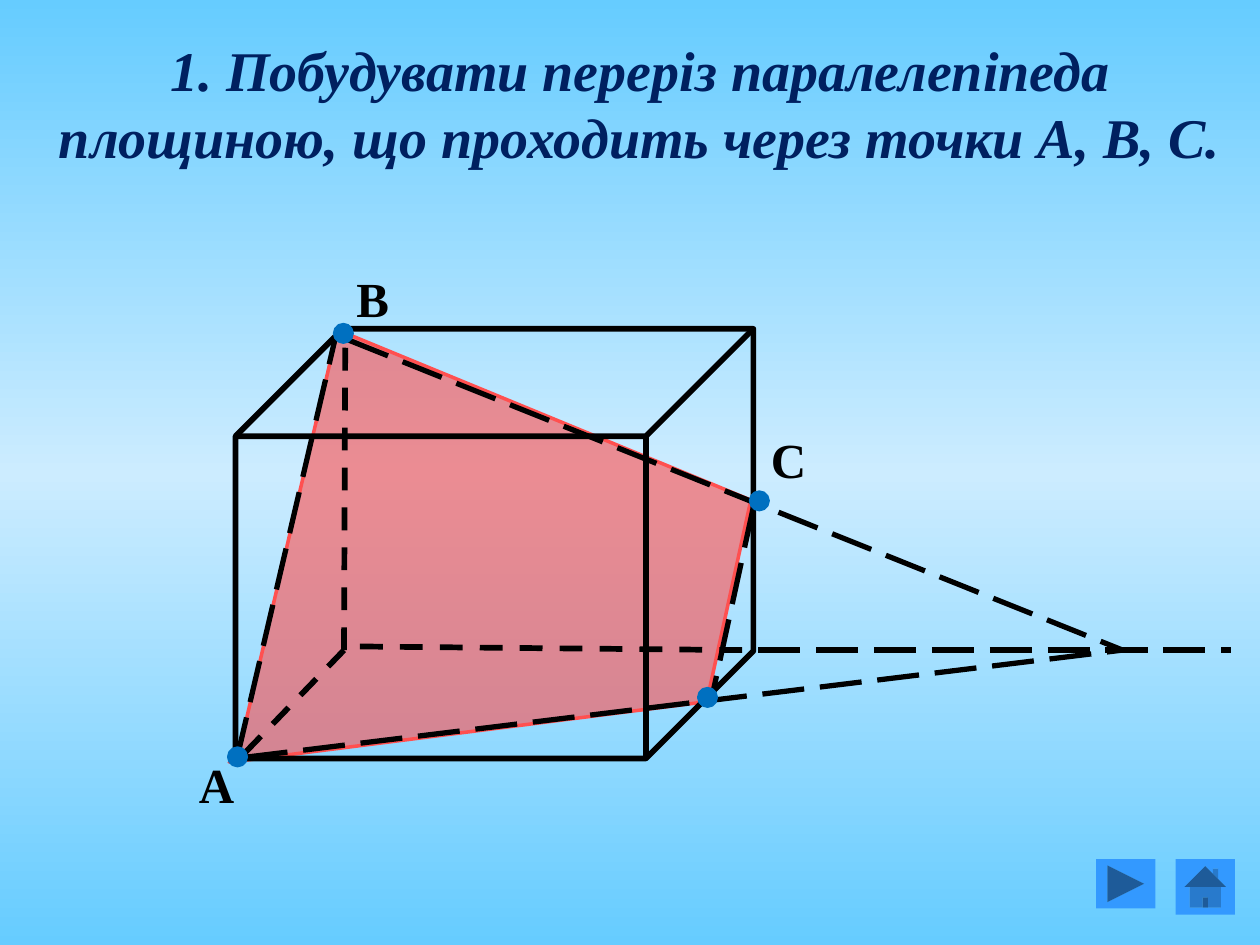
from copy import deepcopy

from lxml import etree
from pptx import Presentation
from pptx.dml.color import RGBColor
from pptx.enum.dml import MSO_LINE
from pptx.enum.shapes import MSO_CONNECTOR, MSO_SHAPE
from pptx.enum.text import MSO_ANCHOR, MSO_AUTO_SIZE, PP_ALIGN
from pptx.oxml.ns import qn
from pptx.util import Pt

STRAIGHT = MSO_CONNECTOR.STRAIGHT
DASH, LONG_DASH = MSO_LINE.DASH, MSO_LINE.LONG_DASH
CUBE, OVAL = MSO_SHAPE.CUBE, MSO_SHAPE.OVAL
HOME, NEXT = MSO_SHAPE.ACTION_BUTTON_HOME, MSO_SHAPE.ACTION_BUTTON_FORWARD_OR_NEXT
FIT = MSO_AUTO_SIZE.SHAPE_TO_FIT_TEXT

SKY = RGBColor(0x66, 0xCC, 0xFF)
PALE_SKY = RGBColor(0xCC, 0xEC, 0xFF)
NAVY = RGBColor(0x00, 0x20, 0x60)
BLACK = RGBColor(0, 0, 0)
RED = RGBColor(0xFF, 0x50, 0x50)
POINT_BLUE = RGBColor(0x00, 0x70, 0xC0)
BUTTON_BLUE = RGBColor(0x33, 0x99, 0xFF)
FONT = "Times New Roman"

# Content, in points
TITLE = "1. Побудувати переріз паралелепіпеда площиною, що проходить через точки А, В, С."
TITLE_BOX = (11.5, 16.5, 708.5, 85)
SECTION = [(135.4, 434.2), (193, 188.6), (429.1, 285.8), (403.9, 401), (131, 435.6)]
CUBE_BOX = (134.6, 187.9, 295.9, 245.5)
HIDDEN_CORNER = (196.6, 371.5)
HIDDEN_EDGES = [
    ((424.1, 371.5), (202.3, 369.4)),
    (HIDDEN_CORNER, (138.2, 432)),
    (HIDDEN_CORNER, (197.3, 191.5)),
]
TRACE = (641.5, 371.5)  # where BC meets the base plane
CONSTRUCTION = [
    ((135.4, 433.4), (193, 187.2)),
    ((140.4, 432.7), TRACE),
    ((433.4, 371.5), (703.4, 371.5)),
    ((199.4, 194.4), TRACE),
    ((430.6, 289.4), (407.5, 395.3)),
]
POINT_SIZE = 10
POINTS = [(196.2, 190.5), (135.7, 432.5), (404.3, 398.5), (433.9, 286.2)]
LABELS = [
    ("А", 106.6, 427.7, 35.3),
    ("С", 433.4, 241.9, 35.3),
    ("В", 196.6, 149.8, 33.1),
]
LABEL_HEIGHT = 41
BUTTONS = [
    (HOME, (671.8, 491, 33.8, 31.7)),
    (NEXT, (626.4, 491, 33.8, 28.1)),
]


def pts(values):
    return [Pt(v) for v in values]


def add_line(shapes, start, end, width, dash):
    line = shapes.add_connector(STRAIGHT, *pts(start + end))
    line.line.color.rgb = BLACK
    line.line.width = Pt(width)
    line.line.dash_style = dash
    etree.SubElement(line._element.spPr, qn("a:effectLst"))


def paint(shape, fill=None, line=None, width=0):
    shape.shadow.inherit = False
    if fill is None:
        shape.fill.background()
    else:
        shape.fill.solid()
        shape.fill.fore_color.rgb = fill
    if line is None:
        shape.line.fill.background()
    else:
        shape.line.color.rgb = line
        shape.line.width = Pt(width)


def write(paragraph, text, size, color, italic=False):
    run = paragraph.add_run()
    run.text = text
    font = run.font
    font.name, font.size, font.bold, font.italic = FONT, Pt(size), True, italic
    font.color.rgb = color


prs = Presentation()
prs.slide_width, prs.slide_height = Pt(720), Pt(540)
slide = prs.slides.add_slide(prs.slide_layouts[5])
shapes = slide.shapes

# Background: pale band across the middle
background = slide.background.fill
background.gradient()
background.gradient_angle = 90
last_stop = list(slide._element.iter(qn("a:gs")))[-1]
last_stop.addnext(deepcopy(last_stop))
for stop, position, color in zip(background.gradient_stops, (0, 0.5, 1), (SKY, PALE_SKY, SKY)):
    stop.position = position
    stop.color.rgb = color

# Title
title = shapes.title
title.left, title.top, title.width, title.height = pts(TITLE_BOX)
title.text_frame.word_wrap = True
title.text_frame.auto_size = FIT
title.text_frame.vertical_anchor = MSO_ANCHOR.TOP
heading = title.text_frame.paragraphs[0]
heading.alignment = PP_ALIGN.CENTER
write(heading, TITLE, 32, NAVY, italic=True)

# Section plane, translucent
outline = shapes.build_freeform(*pts(SECTION[0]))
outline.add_line_segments([pts(corner) for corner in SECTION[1:]], close=True)
section = outline.convert_to_shape()
paint(section, RED, RED, 2)
red_fill = section._element.spPr.find(qn("a:solidFill"))
etree.SubElement(red_fill[0], qn("a:alpha"), val="61000")

# Parallelepiped with its hidden edges
solid = shapes.add_group_shape()
for start, end in HIDDEN_EDGES:
    add_line(solid.shapes, start, end, 3.25, DASH)
paint(solid.shapes.add_shape(CUBE, *pts(CUBE_BOX)), line=BLACK, width=3.25)

# Construction lines, then the points over them
for start, end in CONSTRUCTION:
    add_line(shapes, start, end, 3, LONG_DASH)
for x, y in POINTS:
    corner = (x - POINT_SIZE / 2, y - POINT_SIZE / 2)
    point = shapes.add_shape(OVAL, *pts(corner), Pt(POINT_SIZE), Pt(POINT_SIZE))
    paint(point, POINT_BLUE, POINT_BLUE, 2)

# Point labels
for letter, left, top, width in LABELS:
    frame = shapes.add_textbox(*pts((left, top, width, LABEL_HEIGHT))).text_frame
    frame.word_wrap = False
    frame.auto_size = FIT
    write(frame.paragraphs[0], letter, 28, BLACK)

# Navigation buttons
for kind, box in BUTTONS:
    paint(shapes.add_shape(kind, *pts(box)), BUTTON_BLUE)

prs.save("out.pptx")
